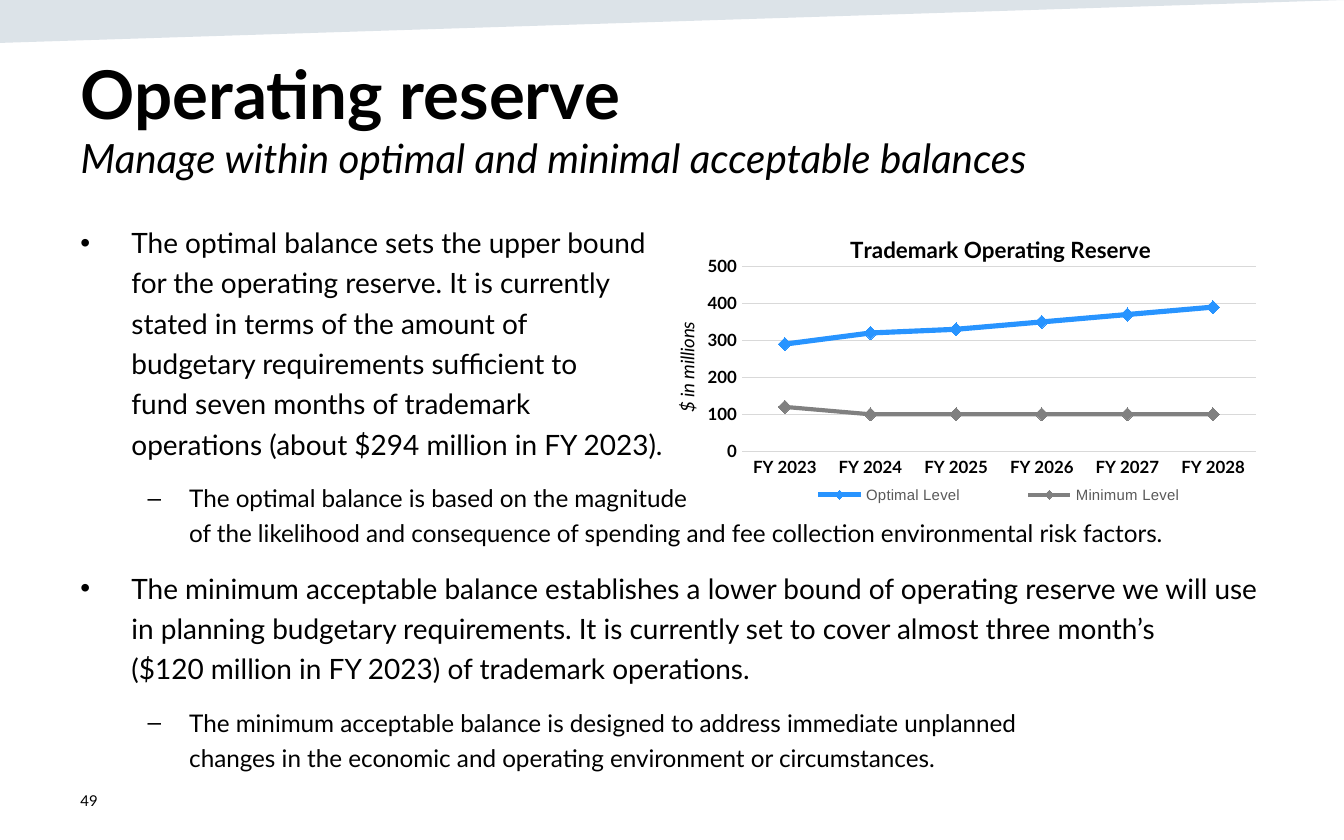
"""Builds the operating reserve slide with its text and line chart."""
from copy import deepcopy

from lxml import etree
from pptx import Presentation
from pptx.chart.data import CategoryChartData
from pptx.dml.color import RGBColor
from pptx.enum.chart import XL_CHART_TYPE, XL_LEGEND_POSITION, XL_MARKER_STYLE, XL_TICK_MARK
from pptx.enum.text import MSO_ANCHOR, MSO_AUTO_SIZE, PP_ALIGN
from pptx.oxml import parse_xml
from pptx.oxml.ns import nsdecls, qn
from pptx.util import Pt

LINE_CHART = XL_CHART_TYPE.LINE_MARKERS
BOTTOM = XL_LEGEND_POSITION.BOTTOM
DIAMOND = XL_MARKER_STYLE.DIAMOND
NO_TICK = XL_TICK_MARK.NONE
TOP, MIDDLE = MSO_ANCHOR.TOP, MSO_ANCHOR.MIDDLE
NO_FIT = MSO_AUTO_SIZE.NONE
LEFT = PP_ALIGN.LEFT

COLORS = {
    "text": "000000", "band": "164469", "optimal": "2894FF",
    "minimum": "808080", "grid": "D9D9D9", "legend": "595959",
}
FONT = "Lato"
YEARS = [f"FY {year}" for year in range(2023, 2029)]
SERIES = [
    ("Optimal Level", [290, 320, 330, 350, 370, 390], "optimal", 2.75),
    ("Minimum Level", [120, 100, 100, 100, 100, 100], "minimum", 2.25),
]
LEVELS = [
    {"size": 15, "bullet": "•", "margin": 27.36, "hanging": 27.36},
    {"size": 13, "bullet": "–", "margin": 58.32, "hanging": 22.32},
]
BODY = [
    (0, "The optimal balance sets the upper bound \vfor the operating reserve. It is currently \v"
        "stated in terms of the amount of \vbudgetary requirements sufficient to \v"
        "fund seven months of trademark \voperations (about $294 million in FY 2023)."),
    (1, "The optimal balance is based on the magnitude \vof the likelihood and consequence of "
        "spending and fee collection environmental risk factors."),
    (0, "The minimum acceptable balance establishes a lower bound of operating reserve we will use "
        "in planning budgetary requirements. It is currently set to cover almost three month’s \v"
        "($120 million in FY 2023) of trademark operations."),
    (1, "The minimum acceptable balance is designed to address immediate unplanned \v"
        "changes in the economic and operating environment or circumstances."),
]


def color(name):
    """Return the named colour."""
    return RGBColor.from_string(COLORS[name])


def format_font(font, size, name=FONT, fill="text", bold=False, italic=False):
    """Set typeface, size, style and colour of a font."""
    font.name, font.size, font.bold, font.italic = name, Pt(size), bold, italic
    font.color.rgb = color(fill)


def write(para, text, **style):
    """Append text to a paragraph, with vertical tabs as line breaks."""
    for index, line in enumerate(text.split("\v")):
        if index:
            para.add_line_break()
        span = para.add_run()
        span.text = line
        format_font(span.font, **style)
    for line_break in para._p.findall(qn("a:br")):
        if len(line_break) == 0:
            line_break.append(deepcopy(span._r.rPr))


def set_frame(box, anchor=TOP):
    """Wrap the text of a box at a fixed size and return its frame."""
    frame = box.text_frame
    frame.word_wrap, frame.auto_size, frame.vertical_anchor = True, NO_FIT, anchor
    return frame


def add_band(page):
    """Draw the pale wedge along the top edge."""
    builder = page.shapes.build_freeform(0, 0)
    builder.add_line_segments([(0, Pt(23)), (Pt(720), 0)])
    band = builder.convert_to_shape()
    band.shadow.inherit = False
    band.line.fill.background()
    band.fill.solid()
    band.fill.fore_color.rgb = color("band")
    tint = band.fill._xPr.find(".//" + qn("a:srgbClr"))
    etree.SubElement(tint, qn("a:alpha")).set("val", "15000")


def add_title(page):
    """Fill the title placeholder with heading and subtitle."""
    title = page.shapes.title
    title.left, title.top, title.width, title.height = Pt(36), Pt(24.5), Pt(648), Pt(75)
    para = set_frame(title).paragraphs[0]
    para.alignment = LEFT
    write(para, "Operating reserve", size=36, bold=True)
    para.add_line_break()
    write(para, "Manage within optimal and minimal acceptable balances", size=21.6, italic=True)


def add_body(page):
    """Write the two-level bulleted text."""
    frame = set_frame(page.shapes.add_textbox(Pt(36), Pt(113.76), Pt(648), Pt(303)))
    for index, (depth, text) in enumerate(BODY):
        para = frame.add_paragraph() if index else frame.paragraphs[0]
        level = LEVELS[depth]
        para.level, para.line_spacing, para.space_before = depth, 1.2, Pt(9)
        write(para, text, size=level["size"])
        props = para._p.get_or_add_pPr()
        props.set("marL", str(Pt(level["margin"])))
        props.set("indent", str(-Pt(level["hanging"])))
        etree.SubElement(props, qn("a:buFont")).set("typeface", "Arial")
        etree.SubElement(props, qn("a:buChar")).set("char", level["bullet"])


def add_page_number(page):
    """Write the page number at the lower left."""
    box = page.shapes.add_textbox(Pt(36), Pt(417), Pt(162), Pt(23.75))
    write(set_frame(box, MIDDLE).paragraphs[0], "49", size=8)


def place(part, inner=False, **position):
    """Give a chart part a manual layout in fractions of the chart."""
    for old in part.findall(qn("c:layout")):
        part.remove(old)
    target = '<c:layoutTarget val="inner"/>' if inner else ""
    modes = "".join(f'<c:{key}Mode val="edge"/>' for key in "xy")
    sizes = "".join(f'<c:{key} val="{value}"/>' for key, value in position.items())
    layout = parse_xml(f'<c:layout {nsdecls("c")}><c:manualLayout>{target}{modes}{sizes}'
                       "</c:manualLayout></c:layout>")
    before = [child for child in part if child.tag in (qn("c:tx"), qn("c:legendPos"))]
    part.insert(part.index(before[-1]) + 1 if before else 0, layout)


def set_chart_title(title, text, x, y, **style):
    """Write and place the title of a chart or an axis."""
    write(title.text_frame.paragraphs[0], text, **style)
    place(title._element, x=x, y=y)


def format_axes(chart):
    """Format both axes and the grid."""
    years, amounts = chart.category_axis, chart.value_axis
    for axis in (years, amounts):
        axis.major_tick_mark = axis.minor_tick_mark = NO_TICK
        format_font(axis.tick_labels.font, 9, bold=True)
    amounts.minimum_scale, amounts.maximum_scale, amounts.major_unit = 0, 500, 100
    amounts.tick_labels.number_format = "#,##0"
    amounts.tick_labels.number_format_is_linked = False
    amounts.format.line.fill.background()
    for line in (years.format.line, amounts.major_gridlines.format.line):
        line.width, line.color.rgb = Pt(0.75), color("grid")
    set_chart_title(amounts.axis_title, "$ in millions", 0.07, 0.34, size=10, italic=True)


def add_reserve_chart(page):
    """Add the line chart of both reserve levels."""
    data = CategoryChartData()
    data.categories = YEARS
    for name, values, *_ in SERIES:
        data.add_series(name, values)
    chart = page.shapes.add_chart(
        LINE_CHART, Pt(334.8), Pt(118), Pt(348.5), Pt(154.8), data).chart
    format_font(chart.font, 10, name="Arial")
    chart.has_title = True
    set_chart_title(chart.chart_title, "Trademark Operating Reserve", 0.34, 0.03,
                    size=12, bold=True)
    format_axes(chart)
    for series, (_, _, fill, width) in zip(chart.plots[0].series, SERIES):
        series.smooth = False
        series.format.line.width, series.format.line.color.rgb = Pt(width), color(fill)
        series.marker.style, series.marker.size = DIAMOND, 7
        series.marker.format.fill.solid()
        series.marker.format.fill.fore_color.rgb = color(fill)
        series.marker.format.line.color.rgb = color(fill)
    chart.has_legend = True
    chart.legend.position, chart.legend.include_in_layout = BOTTOM, False
    format_font(chart.legend.font, 8, name="Arial", fill="legend")
    place(chart.legend._element, x=0.2, y=0.9, w=0.75, h=0.1)
    place(chart._chartSpace.chart.plotArea, inner=True, x=0.18, y=0.16, w=0.79, h=0.64)


def main():
    """Build and save the deck."""
    deck = Presentation()
    deck.slide_width, deck.slide_height = Pt(720), Pt(450)
    page = deck.slides.add_slide(deck.slide_layouts[5])
    add_band(page)
    add_title(page)
    add_body(page)
    add_page_number(page)
    add_reserve_chart(page)
    deck.save("out.pptx")


if __name__ == "__main__":
    main()
